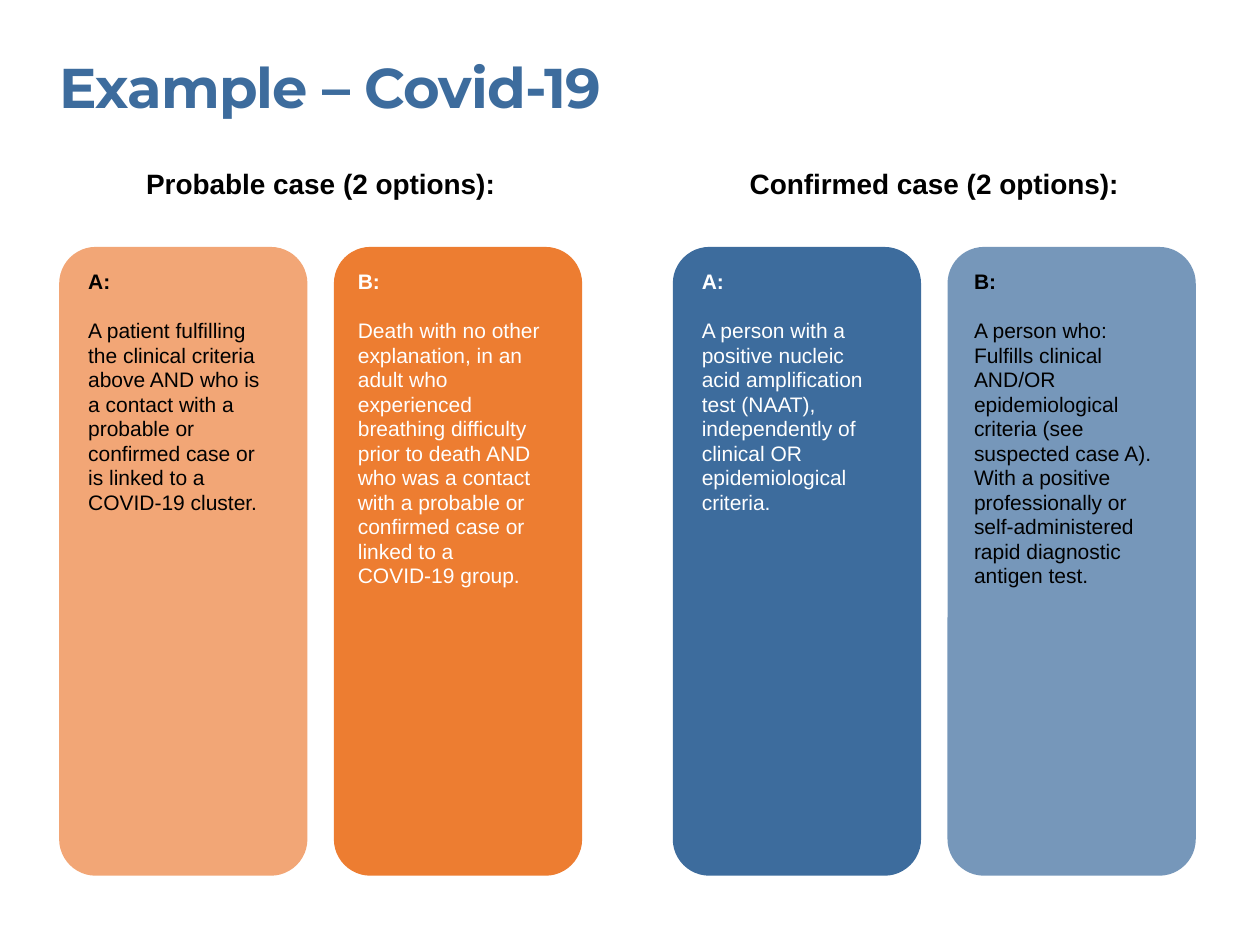
from dataclasses import dataclass

from lxml import etree
from pptx import Presentation
from pptx.dml.color import RGBColor
from pptx.enum.shapes import MSO_SHAPE
from pptx.enum.text import MSO_AUTO_SIZE, PP_ALIGN
from pptx.oxml.ns import qn
from pptx.slide import Slide
from pptx.util import Pt

ROUNDED = MSO_SHAPE.ROUNDED_RECTANGLE
FIT_TEXT = MSO_AUTO_SIZE.SHAPE_TO_FIT_TEXT
LEFT, CENTER = PP_ALIGN.LEFT, PP_ALIGN.CENTER


@dataclass(frozen=True)
class Theme:
    blue: str = "3D6C9D"
    orange: str = "ED7D31"
    peach: str = "F2A676"
    black: str = "000000"
    white: str = "FFFFFF"
    title_font: str = "Montserrat"
    body_font: str = "Arial"
    title_size: float = 32
    heading_size: float = 16
    body_size: float = 12
    line_height: float = 14


@dataclass(frozen=True)
class Option:
    label: str
    criteria: tuple[str, ...]
    fill: str
    color: str
    inset: float
    text_width: float
    opacity: int = 100


@dataclass(frozen=True)
class CaseGroup:
    heading: str
    options: tuple[Option, ...]


THEME = Theme()

# Layout, in points
MARGIN = 33.84
GROUP_STEP = 350.64
GROUP_WIDTH = 298.8
CARD_STEP = 157
CARD_TOP, CARD_WIDTH, CARD_HEIGHT = 141.12, 141.84, 359.28
CARD_ROUNDING = 0.147
TITLE_TOP, TITLE_WIDTH, TITLE_HEIGHT = 30.24, 583.2, 38.88
HEADING_TOP, HEADING_HEIGHT = 95.04, 19.44
TEXT_TOP = 154.08

GROUPS = (
    CaseGroup("Probable case (2 options):", (
        Option("A:", (
            "A patient fulfilling the clinical criteria above AND who is a contact "
            "with a probable or confirmed case or is linked to a COVID-19 cluster.",
        ), THEME.peach, THEME.black, 16.56, 106.56),
        Option("B:", (
            "Death with no other explanation, in an adult who experienced breathing "
            "difficulty prior to death AND who was a contact with a probable or "
            "confirmed case or linked to a COVID-19 group.",
        ), THEME.orange, THEME.white, 13.68, 112.32),
    )),
    CaseGroup("Confirmed case (2 options):", (
        Option("A:", (
            "A person with a positive nucleic acid amplification test (NAAT), "
            "independently of clinical OR epidemiological criteria.",
        ), THEME.blue, THEME.white, 16.56, 106.56),
        Option("B:", (
            "A person who:",
            "Fulfills clinical AND/OR epidemiological criteria (see suspected case A). "
            "With a positive professionally or self-administered rapid diagnostic "
            "antigen test.",
        ), THEME.blue, THEME.black, 15.12, 112.32, opacity=70),
    )),
)


def add_text(slide: Slide, paragraphs: tuple[str, ...], *, left: float, top: float,
             width: float, height: float, size: float, color: str,
             font: str = THEME.body_font, align: PP_ALIGN = LEFT,
             line_height: float | None = None, gap_after_first: float = 0,
             tracking: float = 0) -> None:
    """Add a text box whose first paragraph is bold."""
    frame = slide.shapes.add_textbox(Pt(left), Pt(top), Pt(width), Pt(height)).text_frame
    frame.margin_left = frame.margin_right = frame.margin_top = frame.margin_bottom = 0
    frame.word_wrap = True
    frame.auto_size = FIT_TEXT
    for index, text in enumerate(paragraphs):
        paragraph = frame.paragraphs[0] if index == 0 else frame.add_paragraph()
        paragraph.alignment = align
        if line_height:
            paragraph.line_spacing = Pt(line_height)
        if index == 0 and gap_after_first:
            paragraph.space_after = Pt(gap_after_first)
        run = paragraph.add_run()
        run.text = text
        run.font.name = font
        run.font.size = Pt(size)
        run.font.bold = index == 0
        run.font.color.rgb = RGBColor.from_string(color)
        if tracking:
            run._r.get_or_add_rPr().set("spc", str(round(tracking * 100)))


def add_card(slide: Slide, option: Option, left: float) -> None:
    card = slide.shapes.add_shape(
        ROUNDED, Pt(left), Pt(CARD_TOP), Pt(CARD_WIDTH), Pt(CARD_HEIGHT))
    card.adjustments[0] = CARD_ROUNDING
    card.shadow.inherit = False
    card.line.fill.background()
    card.fill.solid()
    card.fill.fore_color.rgb = RGBColor.from_string(option.fill)
    if option.opacity < 100:
        fill_color = card._element.spPr.find(qn("a:solidFill"))[0]
        etree.SubElement(fill_color, qn("a:alpha")).set("val", str(option.opacity * 1000))

    line_count = 10 if option.text_width < 110 else 13
    add_text(slide, (option.label, *option.criteria),
             left=left + option.inset, top=TEXT_TOP, width=option.text_width,
             height=line_count * THEME.line_height, size=THEME.body_size,
             color=option.color, line_height=THEME.line_height,
             gap_after_first=THEME.line_height)


def add_group(slide: Slide, group: CaseGroup, left: float) -> None:
    add_text(slide, (group.heading,), left=left, top=HEADING_TOP, width=GROUP_WIDTH,
             height=HEADING_HEIGHT, size=THEME.heading_size, color=THEME.black,
             align=CENTER)
    for index, option in enumerate(group.options):
        add_card(slide, option, left + index * CARD_STEP)


def main() -> None:
    presentation = Presentation()
    presentation.slide_width, presentation.slide_height = Pt(720), Pt(540)
    slide = presentation.slides.add_slide(presentation.slide_layouts[6])

    # Title
    add_text(slide, ("Example – Covid-19",), left=MARGIN, top=TITLE_TOP,
             width=TITLE_WIDTH, height=TITLE_HEIGHT, size=THEME.title_size,
             color=THEME.blue, font=THEME.title_font, tracking=-0.5)

    # Case definitions
    for index, group in enumerate(GROUPS):
        add_group(slide, group, MARGIN + index * GROUP_STEP)

    presentation.save("out.pptx")


if __name__ == "__main__":
    main()
